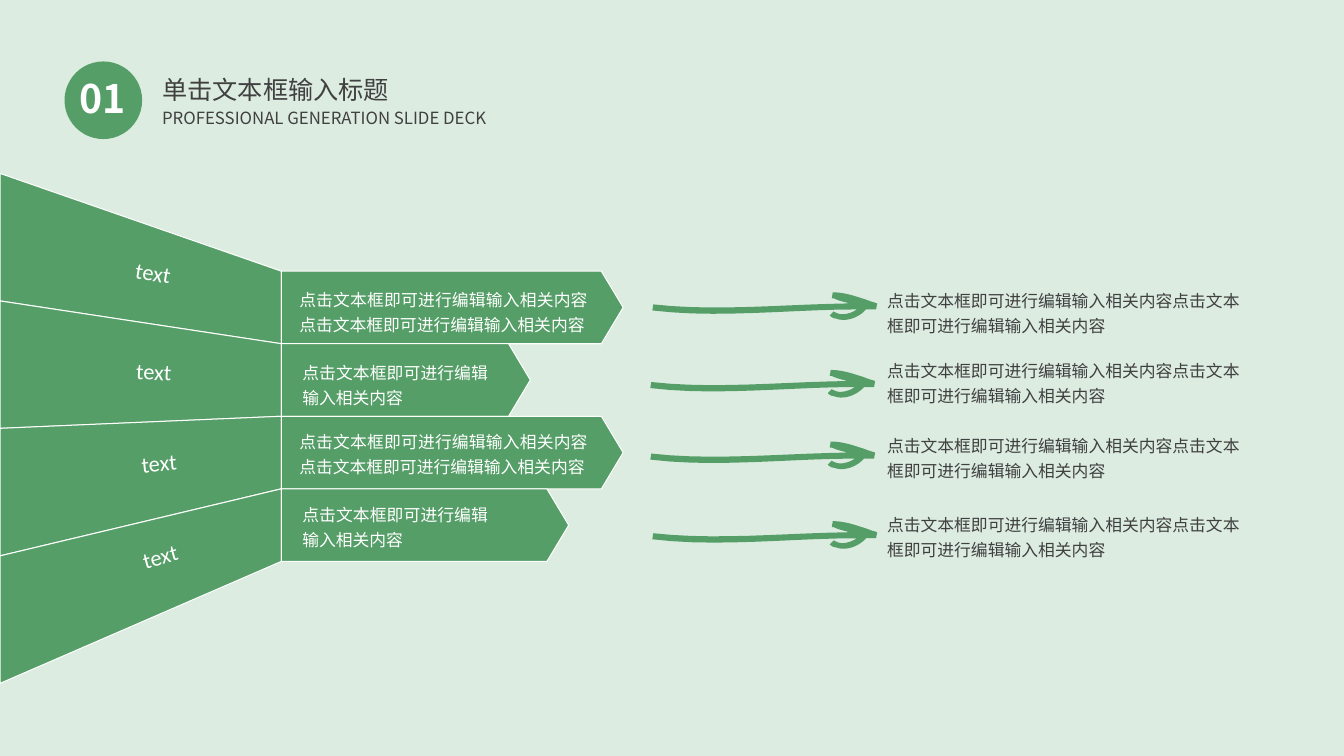
from dataclasses import dataclass

from lxml import etree
from pptx import Presentation
from pptx import util as u
from pptx.dml import color
from pptx.enum import shapes, text
from pptx.oxml import ns

Inches = u.Inches
LEFT, MID, JUST = text.PP_ALIGN.LEFT, text.PP_ALIGN.CENTER, text.PP_ALIGN.JUSTIFY


@dataclass(frozen=True)
class Theme:
    paper: color.RGBColor = color.RGBColor.from_string("DCECE0")
    green: color.RGBColor = color.RGBColor.from_string("559E67")
    white: color.RGBColor = color.RGBColor.from_string("FFFFFF")
    ink: color.RGBColor = color.RGBColor.from_string("404040")
    font: str = "Noto Sans CJK SC"
    label: str = "Calibri"
    number: u.Pt = u.Pt(28)
    title: u.Pt = u.Pt(18)
    tag: u.Pt = u.Pt(16)
    body: u.Pt = u.Pt(12)
    edge: u.Pt = u.Pt(0.75)


THEME = Theme()
PHRASE = "点击文本框即可进行编辑输入相关内容"
BODY = {"name": THEME.font, "size": THEME.body}

# Bands: shared rows of the wedges and the pointed bars
TOP, STEP = 2.69, 0.72
FAN_TOP, FAN_STEP = 1.72, 1.265
FOLD, POINT = 2.79, 0.3
# bar length, text left, top, width, phrase count
BARS = [
    (3.39, 2.87, 2.77, 3.06, 2),
    (2.47, 2.9, 3.5, 2.04, 1),
    (3.39, 2.87, 4.18, 3.06, 2),
    (2.85, 2.9, 4.91, 2.04, 1),
]
# tag left, top, width, turn
TAGS = [
    (0.55, 2.52, 1.93, 9.5),
    (0.56, 3.5, 1.93, 2.6),
    (0.56, 4.41, 2.04, -5.7),
    (0.63, 5.33, 1.93, -15.2),
]
# arrow left, arrow top, note top
NOTES = [(6.47, 2.9, 2.78), (6.45, 3.67, 3.48), (6.45, 4.38, 4.22), (6.47, 5.17, 5.01)]

# Arrow outline: one point is a straight side, three points are a curve
START = (2.12, 0.17)
STROKE = [
    [(2.05, 0.25), (1.92, 0.3), (1.82, 0.26)],
    [(1.8, 0.26), (1.78, 0.25), (1.76, 0.23)],
    [(1.8, 0.19)],
    [(1.81, 0.2), (1.82, 0.2), (1.84, 0.21)],
    [(1.89, 0.23), (1.97, 0.21), (2.03, 0.17)],
    [(1.37, 0.17), (0.65, 0.26), (0, 0.18)],
    [(0.01, 0.12)],
    [(0.62, 0.19), (1.3, 0.12), (1.95, 0.11)],
    [(1.94, 0.11), (1.93, 0.1), (1.92, 0.1)],
    [(1.88, 0.09), (1.84, 0.08), (1.8, 0.06)],
    [(1.78, 0.06)],
    [(1.79, 0)],
    [(1.89, 0), (1.99, 0.03), (2.08, 0.06)],
    [(2.12, 0.07), (2.16, 0.09), (2.2, 0.1)],
    [(2.23, 0.11)],
    [(2.22, 0.17)],
]


def set_all(item, values):
    for name, value in values.items():
        setattr(item, name, value)


def paint(shape, edge=False):
    shape.shadow.inherit = False
    shape.fill.solid()
    shape.fill.fore_color.rgb = THEME.green
    if edge:
        shape.line.color.rgb = THEME.white
        shape.line.width = THEME.edge
    else:
        shape.line.fill.background()


def write(shape, words, tint, font, para, wrap=True):
    """Fill the text of a box or placeholder and format it."""
    frame = shape.text_frame
    set_all(frame, {"word_wrap": wrap, "vertical_anchor": text.MSO_ANCHOR.TOP,
                    "auto_size": text.MSO_AUTO_SIZE.NONE})
    line = frame.paragraphs[0]
    set_all(line, para)
    run = line.add_run()
    run.text = words
    set_all(run.font, font)
    run.font.color.rgb = tint
    # East Asian glyphs take their own typeface entry
    east = etree.SubElement(run.font._element, ns.qn("a:ea"))
    east.set("typeface", font["name"])


def place(shape, box):
    names = ("left", "top", "width", "height")
    set_all(shape, dict(zip(names, map(Inches, box))))


def add_text(slide, box, words, tint, font, para, turn=0):
    shape = slide.shapes.add_textbox(*map(Inches, box))
    write(shape, words, tint, font, para)
    shape.rotation = turn


def add_form(slide, points, edge=False):
    spots = [(Inches(x), Inches(y)) for x, y in points]
    pen = slide.shapes.build_freeform(*spots[0])
    pen.add_line_segments(spots[1:], close=True)
    paint(pen.convert_to_shape(), edge)


def trace(steps=10):
    """Return the arrow outline as points, with its curves sampled."""
    points = [START]
    for part in STROKE:
        if len(part) == 1:
            points += part
            continue
        knots = [points[-1], *part]
        for n in range(1, steps + 1):
            t = n / steps
            mix = ((1 - t) ** 3, 3 * t * (1 - t) ** 2, 3 * t * t * (1 - t), t ** 3)
            points.append(tuple(sum(m * k[axis] for m, k in zip(mix, knots))
                                for axis in (0, 1)))
    return points


def add_head(slide):
    disc = slide.shapes.add_shape(shapes.MSO_SHAPE.OVAL,
                                  *map(Inches, (0.64, 0.61, 0.77, 0.77)))
    paint(disc)
    add_text(slide, (0.66, 0.69, 0.72, 0.57), "01", THEME.white,
             {"name": THEME.font, "size": THEME.number, "bold": True},
             {"alignment": MID})
    title = slide.shapes.title
    place(title, (1.51, 0.54, 2.47, 0.56))
    write(title, "单击文本框输入标题", THEME.ink,
          {"name": THEME.font, "size": THEME.title},
          {"alignment": LEFT, "line_spacing": 1.5}, wrap=False)
    add_text(slide, (1.51, 1.02, 4.64, 0.3), "PROFESSIONAL GENERATION SLIDE DECK",
             THEME.ink, BODY, {"alignment": LEFT})


def add_band(slide, row, size):
    """Draw a wedge of the fan and the pointed bar it runs into."""
    top, fan = TOP + row * STEP, FAN_TOP + row * FAN_STEP
    add_form(slide, [(FOLD, top), (FOLD, top + STEP), (0, fan + FAN_STEP), (0, fan)],
             edge=True)
    bar = slide.shapes.add_shape(shapes.MSO_SHAPE.PENTAGON,
                                 *map(Inches, (FOLD, top, size, STEP)))
    bar.adjustments[0] = POINT
    paint(bar, edge=True)


def add_note(slide, outline, left, top, note):
    add_form(slide, [(left + x, top + y) for x, y in outline])
    add_text(slide, (8.7, note, 3.74, 0.61), PHRASE * 2, THEME.ink, BODY,
             {"alignment": LEFT, "line_spacing": 1.25})


def main():
    deck = Presentation()
    set_all(deck, {"slide_width": Inches(13.33), "slide_height": Inches(7.5)})
    slide = deck.slides.add_slide(deck.slide_layouts[5])
    slide.background.fill.solid()
    slide.background.fill.fore_color.rgb = THEME.paper

    add_head(slide)
    for row, (size, *_) in enumerate(BARS):
        add_band(slide, row, size)
    for left, top, width, turn in TAGS:
        add_text(slide, (left, top, width, 0.43), "text", THEME.white,
                 {"name": THEME.label, "size": THEME.tag},
                 {"alignment": MID, "space_before": u.Pt(3)}, turn)
    for _, left, top, width, count in BARS:
        add_text(slide, (left, top, width, 0.61), PHRASE * count, THEME.white, BODY,
                 {"alignment": JUST, "line_spacing": 1.25})
    outline = trace()
    for spot in NOTES:
        add_note(slide, outline, *spot)
    deck.save("out.pptx")


if __name__ == "__main__":
    main()
